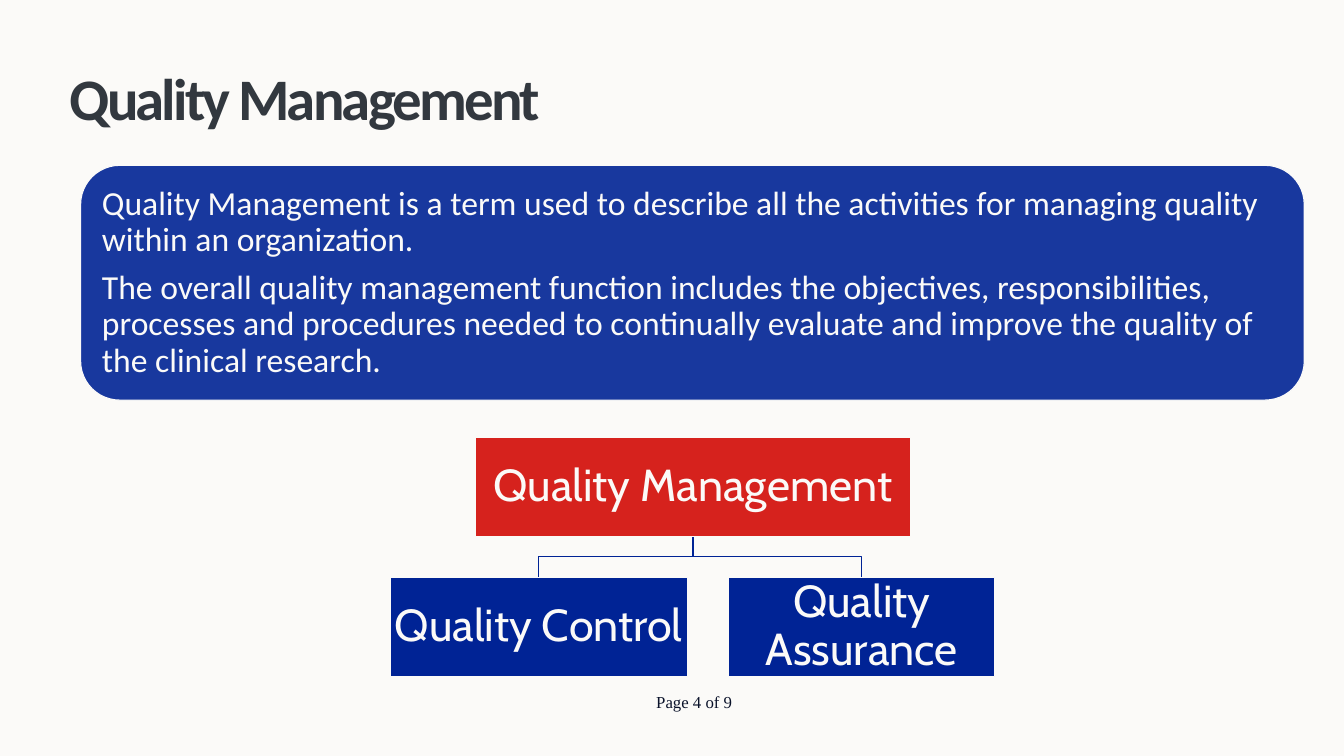
from lxml.etree import SubElement
from pptx import Presentation
from pptx.dml.color import RGBColor
from pptx.enum.shapes import MSO_SHAPE
from pptx.enum.text import MSO_ANCHOR, PP_ALIGN
from pptx.oxml.ns import qn
from pptx.util import Inches, Pt

COLORS = {"paper": "FBFAF8", "blue": "002395", "red": "D6221D",
          "title": "32383F", "footer": "0A122A"}
COLS, ROWS = 40, 30


def rgb(name):
    return RGBColor.from_string(COLORS[name])


class SlideBuilder:
    """Boxes are (left, top, width, height) in grid columns and rows."""

    line_width = Pt(0.85)

    def __init__(self, prs):
        self.col = prs.slide_width / COLS
        self.row = prs.slide_height / ROWS
        self.s = prs.slides.add_slide(prs.slide_layouts[6])
        fill = self.s.background.fill
        fill.solid()
        fill.fore_color.rgb = rgb("paper")

    def place(self, box):
        x, y, w, h = box
        return (round(x * self.col), round(y * self.row),
                round(w * self.col), round(h * self.row))

    def set_text(self, sp, lines, font, size, color="paper", insets=(0, 0, 0, 0),
                 anchor=MSO_ANCHOR.MIDDLE, align=PP_ALIGN.LEFT, spacing=0.9, after=0.35):
        tf = sp.text_frame
        tf.word_wrap = True
        tf.vertical_anchor = anchor
        (tf.margin_left, tf.margin_top,
         tf.margin_right, tf.margin_bottom) = map(Inches, insets)
        tf.text = "\n".join(lines)
        for p in tf.paragraphs:
            p.alignment = align
            p.line_spacing = spacing
            p.space_after = Pt(size * after)
            for r in p.runs:
                r.font.name = font
                r.font.size = Pt(size)
                r.font.color.rgb = rgb(color)
        return tf

    def text(self, box, lines, *args, **style):
        sp = self.s.shapes.add_textbox(*self.place(box))
        return self.set_text(sp, lines, *args, **style)

    def title(self, box, line):
        tf = self.text(box, [line], "Calibri", 42, "title",
                       insets=(0.13, 0.07, 0.13, 0.07), spacing=1.0, after=0)
        r = tf.paragraphs[0].runs[0]
        r.font.bold = True
        r._r.get_or_add_rPr().set("spc", "-200")

    def shape(self, kind, box, fill, opacity=100):
        sp = self.s.shapes.add_shape(kind, *self.place(box))
        sp.shadow.inherit = False
        sp.fill.solid()
        sp.fill.fore_color.rgb = rgb(fill)
        sp.line.color.rgb = rgb("paper")
        sp.line.width = self.line_width
        if opacity < 100:
            clr = sp._element.spPr.find(qn("a:solidFill"))[0]
            SubElement(clr, qn("a:alpha")).set("val", str(opacity * 1000))
        return sp

    def panel(self, box, lines):
        sp = self.shape(MSO_SHAPE.ROUNDED_RECTANGLE, box, "blue", opacity=90)
        self.set_text(sp, lines, "Calibri", 24, insets=(0.1,) * 4)

    def node(self, box, label, fill):
        sp = self.shape(MSO_SHAPE.RECTANGLE, box, fill)
        self.set_text(sp, [label], "Cabin", 32, insets=(0.02,) * 4, align=PP_ALIGN.CENTER)

    def elbow(self, parent, child):
        x1, y1 = parent[0] + parent[2] / 2, parent[1] + parent[3]
        x2, y2 = child[0] + child[2] / 2, child[1]
        mid = (y1 + y2) / 2
        start, *rest = [(round(x * self.col), round(y * self.row))
                        for x, y in ((x1, y1), (x1, mid), (x2, mid), (x2, y2))]
        outline = self.s.shapes.build_freeform(*start)
        outline.add_line_segments(rest, close=False)
        sp = outline.convert_to_shape()
        sp.shadow.inherit = False
        sp.fill.background()
        sp.line.color.rgb = rgb("blue")
        sp.line.width = self.line_width


def main():
    prs = Presentation()
    prs.slide_width, prs.slide_height = Inches(13.33), Inches(7.5)
    slide = SlideBuilder(prs)

    # Title and definition
    slide.title((1.68, 1.36, 36.12, 5), "Quality Management")
    slide.panel((2.4, 6.56, 36.42, 9.32), [
        "Quality Management is a term used to describe all the activities for "
        "managing quality within an organization.",
        "The overall quality management function includes the objectives, "
        "responsibilities, processes and procedures needed to continually "
        "evaluate and improve the quality of the clinical research.",
    ])

    # Hierarchy
    root = (14.16, 17.36, 12.93, 3.92)
    children = [("Quality Control", (11.61, 22.92, 8.85, 3.92)),
                ("Quality Assurance", (21.69, 22.92, 7.92, 3.92))]
    for label, box in children:
        slide.elbow(root, box)
    slide.node(root, "Quality Management", "red")
    for label, box in children:
        slide.node(box, label, "blue")

    # Page number
    slide.text((15.72, 27.48, 6.72, 2.5), ["Page 4 of 9"], "Times New Roman", 12,
               "footer", insets=(1.27, 0.01, 0, 0), anchor=MSO_ANCHOR.TOP,
               spacing=Pt(13.2), after=0)

    prs.save("out.pptx")


if __name__ == "__main__":
    main()
